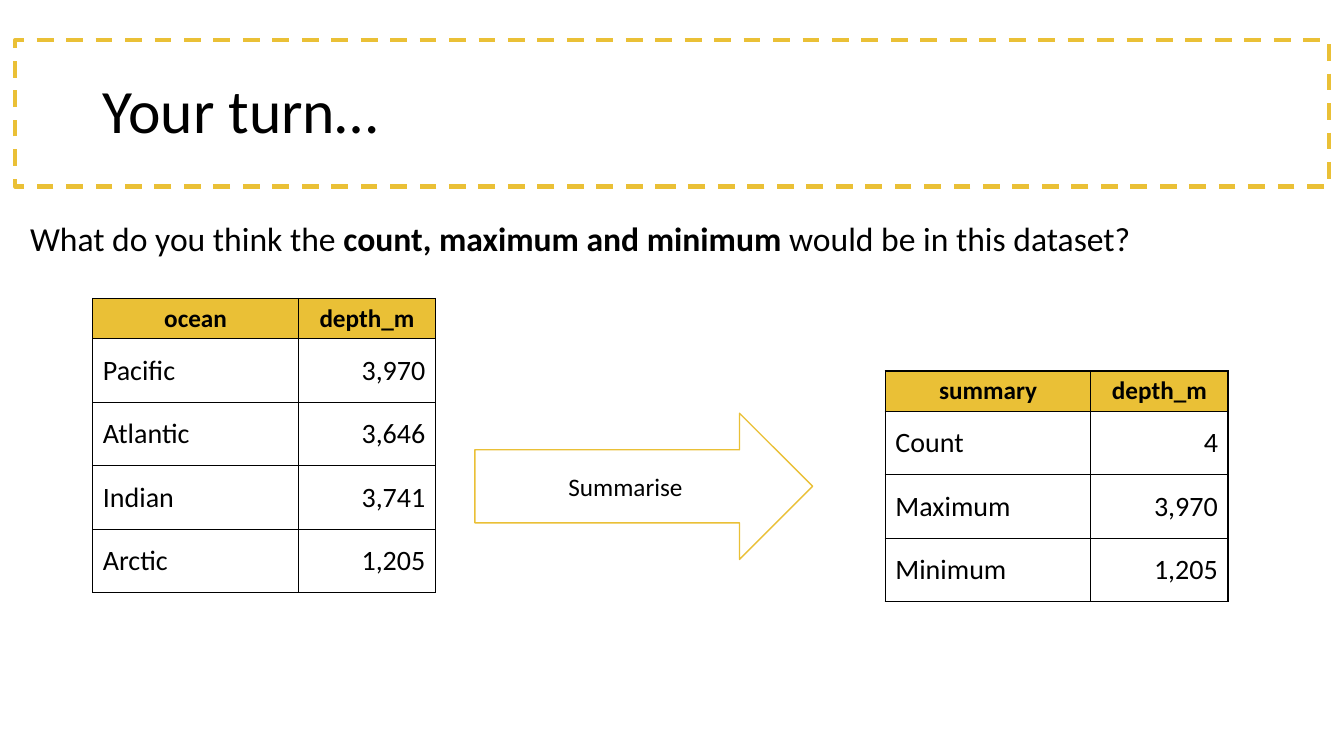
"""Build the "Your turn" slide: an ocean depth table summarised by count, maximum and minimum."""
from lxml import etree
from pptx import Presentation
from pptx.dml.color import RGBColor
from pptx.enum import dml, shapes, text
from pptx.oxml.ns import qn
from pptx.util import Inches, Pt

TITLE = "Your turn…"
QUESTION = [
    ("What do you think the ", False),
    ("count, maximum and minimum ", True),
    ("would be in this dataset?", False),
]
ARROW_LABEL = "Summarise"
TABLES = [
    (0.92, 2.96, [("ocean", "depth_m"), ("Pacific", "3,970"), ("Atlantic", "3,646"),
                  ("Indian", "3,741"), ("Arctic", "1,205")]),
    (8.78, 3.68, [("summary", "depth_m"), ("Count", "4"), ("Maximum", "3,970"),
                  ("Minimum", "1,205")]),
]
COLORS = {"gold": "EAC036", "ink": "000000", "paper": "FFFFFF"}
FONT = "Calibri"
COL_WIDTHS = (2.04, 1.36)
HEADER_HEIGHT, ROW_HEIGHT = 0.4, 0.63
ALIGN = text.PP_ALIGN


def color(name):
    return RGBColor.from_string(COLORS[name])


def box(left, top, width, height):
    return [Inches(v) for v in (left, top, width, height)]


def add_run(p, words, size, bold=False):
    r = p.add_run()
    r.text = words
    for key, value in {"name": FONT, "size": Pt(size), "bold": bold}.items():
        setattr(r.font, key, value)
    r.font.color.rgb = color("ink")


def add_outline(s, kind, place, width, fill=None, dash=None):
    sp = s.shapes.add_shape(kind, *box(*place))
    sp.shadow.inherit = False
    if fill:
        sp.fill.solid()
        sp.fill.fore_color.rgb = color(fill)
    else:
        sp.fill.background()
    sp.line.color.rgb = color("gold")
    sp.line.width = Pt(width)
    if dash:
        sp.line.dash_style = dash
    return sp


def add_borders(cell):
    tc_pr = cell._tc.get_or_add_tcPr()
    for i, side in enumerate(("lnL", "lnR", "lnT", "lnB")):
        ln = etree.Element(qn("a:" + side), w=str(Pt(1)))
        fill = etree.SubElement(ln, qn("a:solidFill"))
        etree.SubElement(fill, qn("a:srgbClr"), val=COLORS["ink"])
        tc_pr.insert(i, ln)


def add_data_table(s, left, top, rows):
    heights = [HEADER_HEIGHT] + [ROW_HEIGHT] * (len(rows) - 1)
    place = box(left, top, sum(COL_WIDTHS), sum(heights))
    table = s.shapes.add_table(len(rows), len(COL_WIDTHS), *place).table
    for col, width in zip(table.columns, COL_WIDTHS):
        col.width = Inches(width)
    for i, (row, height) in enumerate(zip(rows, heights)):
        table.rows[i].height = Inches(height)
        for j, words in enumerate(row):
            cell = table.cell(i, j)
            cell.vertical_anchor = text.MSO_ANCHOR.MIDDLE
            cell.fill.solid()
            cell.fill.fore_color.rgb = color("paper" if i else "gold")
            add_borders(cell)
            p = cell.text_frame.paragraphs[0]
            p.alignment = (ALIGN.LEFT, ALIGN.RIGHT)[j] if i else ALIGN.CENTER
            add_run(p, words, 20 if i else 18, bold=i == 0)


def main():
    prs = Presentation()
    prs.slide_width, prs.slide_height = Inches(13.33), Inches(7.5)
    s = prs.slides.add_slide(prs.slide_layouts[5])

    add_outline(s, shapes.MSO_SHAPE.RECTANGLE, (0.15, 0.4, 13.03, 1.45), 3,
                dash=dml.MSO_LINE.DASH)
    title = s.shapes.title
    title.left, title.top, title.width, title.height = box(0.92, 0.4, 11.5, 1.45)
    tf = title.text_frame
    tf.auto_size = text.MSO_AUTO_SIZE.NONE
    tf.vertical_anchor = text.MSO_ANCHOR.MIDDLE
    p = tf.paragraphs[0]
    p.alignment, p.line_spacing = ALIGN.LEFT, 0.9
    add_run(p, TITLE, 44)

    tf = s.shapes.add_textbox(*box(0.2, 2.11, 11.79, 0.91)).text_frame
    tf.word_wrap = True
    for words, bold in QUESTION:
        add_run(tf.paragraphs[0], words, 24, bold)

    for left, top, rows in TABLES:
        add_data_table(s, left, top, rows)

    arrow = add_outline(s, shapes.MSO_SHAPE.RIGHT_ARROW, (4.71, 4.1, 3.35, 1.45), 1,
                        fill="paper")
    tf = arrow.text_frame
    tf.vertical_anchor = text.MSO_ANCHOR.MIDDLE
    tf.paragraphs[0].alignment = ALIGN.CENTER
    add_run(tf.paragraphs[0], ARROW_LABEL, 18)

    prs.save("out.pptx")


if __name__ == "__main__":
    main()
